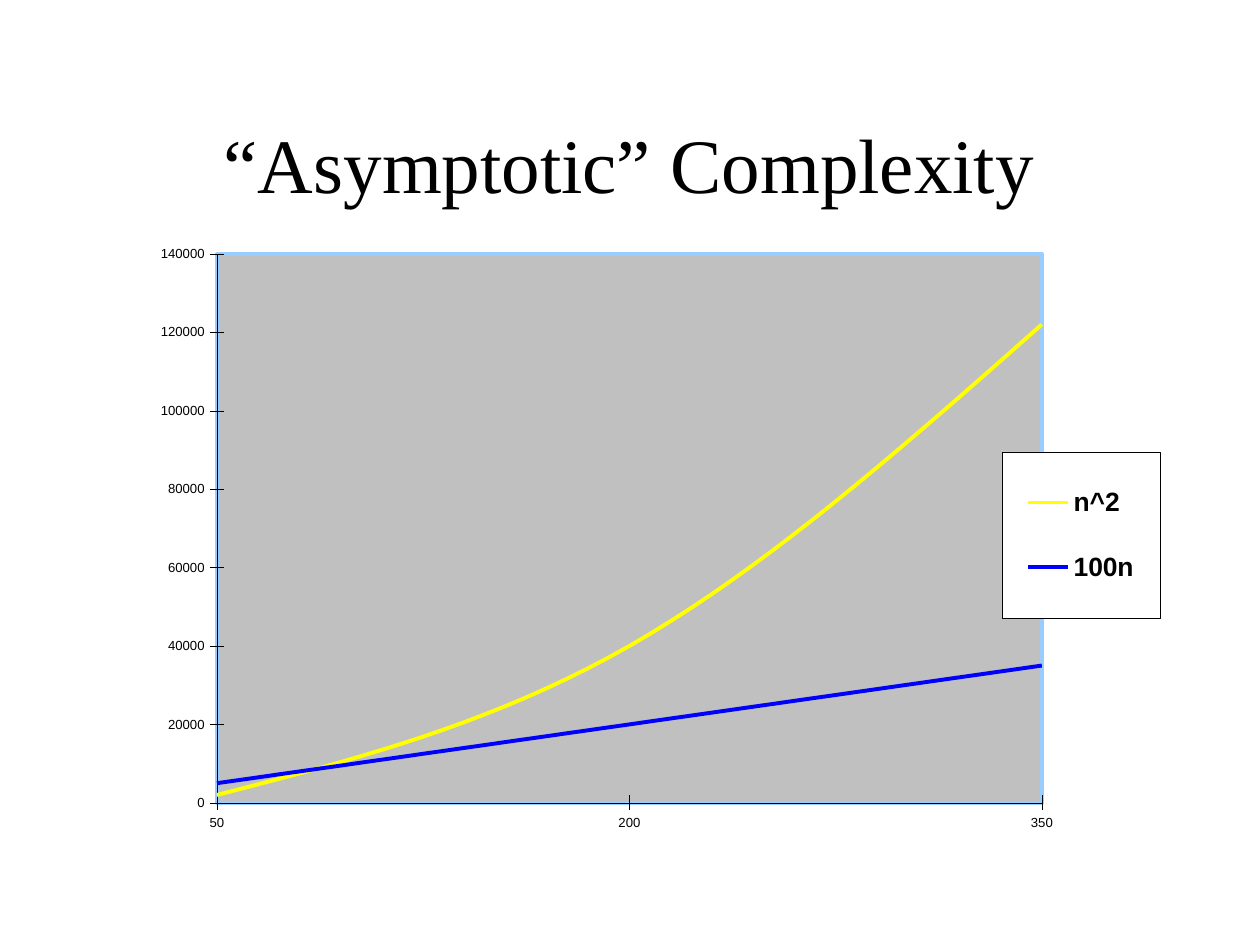
import pptx
import pptx.chart.data
import pptx.dml.color
import pptx.enum.chart
import pptx.enum.text
import pptx.oxml
import pptx.oxml.ns
import pptx.util

SCALE = 914400 / 126
LINES = [
    ("n^2", (2000, 40000, 122000), "FFFF00"),
    ("100n", (5000, 20000, 35000), "0000FF"),
]
Pt = pptx.util.Pt
enums = pptx.enum.chart


def emu(px):
    return round(px * SCALE)


def color(code):
    return pptx.dml.color.RGBColor.from_string(code)


def style(font, size, bold=False, name="Arial"):
    font.name = name
    font.size = Pt(size)
    font.bold = bold
    font.color.rgb = color("000000")


def layout(box, frame, inner=False):
    tags = [("layoutTarget", "inner")] if inner else []
    tags += [("xMode", "edge"), ("yMode", "edge")]
    sizes = (frame[2], frame[3], frame[2], frame[3])
    tags += [(key, round(px / size, 4)) for key, px, size in zip("xywh", box, sizes)]
    body = "".join(f'<c:{key} val="{val}"/>' for key, val in tags)
    return pptx.oxml.parse_xml(
        f'<c:layout {pptx.oxml.ns.nsdecls("c")}><c:manualLayout>{body}</c:manualLayout></c:layout>')


def place(parent, index, box, frame, inner=False):
    for old in parent.findall(pptx.oxml.ns.qn("c:layout")):
        parent.remove(old)
    parent.insert(index, layout(box, frame, inner))


def panel(fill, line, width):
    return pptx.oxml.parse_xml(
        f'<c:spPr {pptx.oxml.ns.nsdecls("c", "a")}>'
        f'<a:solidFill><a:srgbClr val="{fill}"/></a:solidFill>'
        f'<a:ln w="{Pt(width)}"><a:solidFill><a:srgbClr val="{line}"/></a:solidFill></a:ln></c:spPr>')


def add_title(slide, box):
    title = slide.shapes.title
    title.left, title.top, title.width, title.height = map(emu, box)
    frame = title.text_frame
    frame.word_wrap = True
    frame.vertical_anchor = pptx.enum.text.MSO_ANCHOR.MIDDLE
    para = frame.paragraphs[0]
    para.alignment = pptx.enum.text.PP_ALIGN.CENTER
    run = para.add_run()
    run.text = "“Asymptotic” Complexity"
    style(run.font, 44, name="Times New Roman")


def set_axis(axis):
    axis.has_major_gridlines = False
    axis.major_tick_mark = enums.XL_TICK_MARK.CROSS
    axis.minor_tick_mark = enums.XL_TICK_MARK.NONE
    axis.format.line.color.rgb = color("000000")
    axis.format.line.width = Pt(0.19)
    style(axis.tick_labels.font, 7.5)


def add_legend(chart, frame):
    chart.has_legend = True
    legend = chart.legend
    legend.position = enums.XL_LEGEND_POSITION.RIGHT
    legend.include_in_layout = False
    style(legend.font, 15.1, True)
    node = chart.element.find(".//" + pptx.oxml.ns.qn("c:legend"))
    place(node, 1, (847, 210, 158, 166), frame)
    node.find(pptx.oxml.ns.qn("c:txPr")).addprevious(panel("FFFFFF", "000000", 0.19))


def add_graph(slide, box):
    data = pptx.chart.data.CategoryChartData()
    data.categories = ["50", "200", "350"]
    for name, vals, hue in LINES:
        data.add_series(name, vals)
    chart = slide.shapes.add_chart(enums.XL_CHART_TYPE.LINE, *map(emu, box), data).chart
    chart.has_title = False
    style(chart.font, 7.5)
    for axis in (chart.category_axis, chart.value_axis):
        set_axis(axis)
    scale = chart.value_axis
    scale.minimum_scale, scale.maximum_scale, scale.major_unit = 0, 140000, 20000
    area = chart.element.find(".//" + pptx.oxml.ns.qn("c:plotArea"))
    cross = area.find(pptx.oxml.ns.qn("c:valAx") + "/" + pptx.oxml.ns.qn("c:crosses"))
    cross.addnext(pptx.oxml.parse_xml(
        f'<c:crossBetween {pptx.oxml.ns.nsdecls("c")} val="midCat"/>'))
    plot = chart.plots[0]
    plot.vary_by_categories = False
    for series, (name, vals, hue) in zip(plot.series, LINES):
        series.smooth = True
        series.format.line.color.rgb = color(hue)
        series.format.line.width = Pt(2.25)
    place(area, 0, (62, 12, 825, 549), box, True)
    area.append(panel("C0C0C0", "99CCFF", 2.25))
    add_legend(chart, box)


def main():
    deck = pptx.Presentation()
    deck.slide_width, deck.slide_height = emu(1260), emu(945)
    slide = deck.slides.add_slide(deck.slide_layouts[5])
    add_graph(slide, (155, 242, 1009, 616))
    add_title(slide, (94, 84, 1071, 158))
    deck.save("out.pptx")


if __name__ == "__main__":
    main()
